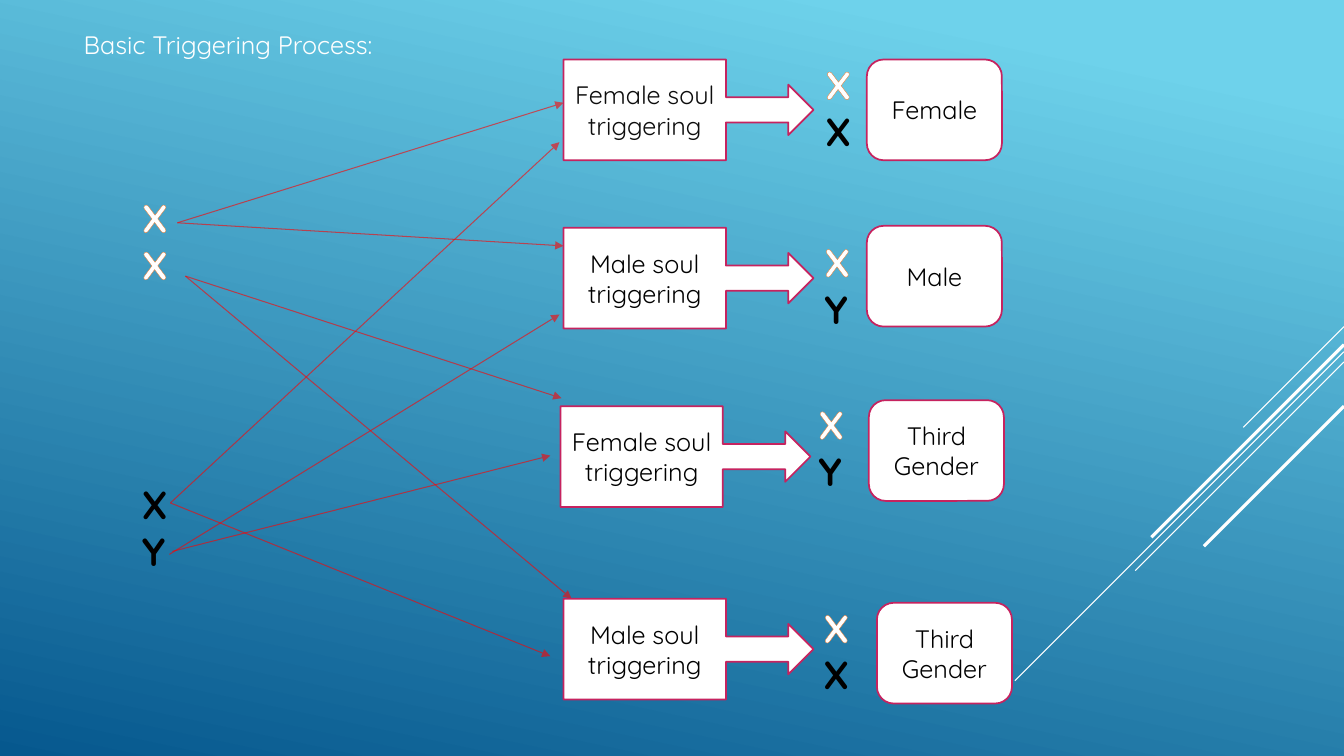
from lxml.etree import SubElement
from pptx import Presentation
from pptx.dml.color import RGBColor
from pptx.enum.shapes import MSO_CONNECTOR, MSO_SHAPE
from pptx.enum.text import MSO_ANCHOR, MSO_AUTO_SIZE, PP_ALIGN
from pptx.oxml import parse_xml
from pptx.oxml.ns import nsdecls, qn
from pptx.util import Inches, Pt

WIDTH, HEIGHT = Inches(13.333), Inches(7.5)
FONT = "Quicksand"
WHITE, BLACK, RED, PINK = "FFFFFF", "000000", "FF0000", "C6235F"
ORANGE, PEACH = "E87D37", "F1B187"

# All positions and sizes are percentages of the slide's width and height.
CALLOUT_SIZE = (18.6, 13.33)
RESULT_SIZE = (10.05, 13.33)
PAIR_SIZE = (3.52, 13.87)

# Callout text, colour and place; second chromosome and pair place; result and place
OUTCOMES = [
    ("Female soul triggering", "0D0D0D", (41.93, 7.87), "X", (60.68, 7.33), "Female", (64.5, 7.87)),
    ("Male soul triggering", BLACK, (41.93, 30.13), "Y", (60.6, 30.8), "Male", (64.5, 29.87)),
    ("Female soul triggering", BLACK, (41.7, 53.73), "Y", (60.15, 52.27), "Third Gender", (64.65, 52.93)),
    ("Male soul triggering", BLACK, (41.93, 79.2), "X", (60.53, 79.2), "Third Gender", (65.25, 79.73)),
]

# Start of each fan of arrows, then its ends
ARROWS = [
    ((13.2, 29.47), [(41.93, 13.6), (41.93, 32.53)]),
    ((13.8, 36.53), [(41.78, 52.67), (42.53, 79.2)]),
    ((12.68, 66.53), [(41.63, 18.8), (40.95, 86.8)]),
    ((12.83, 72.93), [(40.95, 60.27)]),
    ((12.6, 73.33), [(41.63, 41.6)]),
]

# Height at the right edge, horizontal run, line width
DIAGONALS = [(43.2, 7.5, 0.75), (46.53, 24.48, 0.75), (47.87, 15.53, 0.75),
             (45.6, 14.33, 2.25), (53.73, 10.42, 2.25)]


def rgb(value):
    return RGBColor.from_string(value)


def share(x, y):
    """Turn percentages of the slide into lengths."""
    return round(WIDTH * x / 100), round(HEIGHT * y / 100)


def add_text(p, text, size=18, color=BLACK, bold=None, align=None):
    p.alignment = align
    r = p.add_run()
    r.text = text
    r.font.name, r.font.size, r.font.bold = FONT, Pt(size), bold
    r.font.color.rgb = rgb(color)
    return r


def outline_text(r, width):
    r.font._element.insert(0, parse_xml(
        f'<a:ln {nsdecls("a")} w="{Pt(width)}"><a:solidFill>'
        f'<a:srgbClr val="{ORANGE}"/></a:solidFill></a:ln>'))


def pattern_text(r):
    r_pr = r.font._element
    r_pr.replace(r_pr.find(qn("a:solidFill")), parse_xml(
        f'<a:pattFill {nsdecls("a")} prst="ltDnDiag">'
        f'<a:fgClr><a:srgbClr val="{PEACH}"/></a:fgClr>'
        f'<a:bgClr><a:srgbClr val="{BLACK}"/></a:bgClr></a:pattFill>'))


def add_pair(slide, place, chromosomes):
    """Stack (letter, is_dark) chromosomes in one text box."""
    tf = slide.shapes.add_textbox(*share(*place), *share(*PAIR_SIZE)).text_frame
    tf.word_wrap, tf.auto_size = False, MSO_AUTO_SIZE.SHAPE_TO_FIT_TEXT
    for i, (letter, is_dark) in enumerate(chromosomes):
        p = tf.add_paragraph() if i else tf.paragraphs[0]
        r = add_text(p, letter, size=28, color=WHITE, bold=True)
        if is_dark:
            pattern_text(r)
        outline_text(r, 1 if is_dark else 0.8)


def add_box(slide, kind, place, size, text, color=BLACK):
    sp = slide.shapes.add_shape(kind, *share(*place), *share(*size))
    sp.shadow.inherit = False
    sp.fill.solid()
    sp.fill.fore_color.rgb = rgb(WHITE)
    sp.line.color.rgb = rgb(PINK)
    sp.line.width = Pt(1.25)
    tf = sp.text_frame
    tf.word_wrap, tf.vertical_anchor = True, MSO_ANCHOR.MIDDLE
    add_text(tf.paragraphs[0], text, color=color, align=PP_ALIGN.CENTER)


def add_line(slide, start, end, color, width=0.75):
    line = slide.shapes.add_connector(MSO_CONNECTOR.STRAIGHT, *share(*start), *share(*end))
    line.line.color.rgb = rgb(color)
    line.line.width = Pt(width)
    SubElement(line._element.spPr, qn("a:effectLst"))
    return line


def add_arrow(slide, start, end):
    ln = add_line(slide, start, end, RED).line._get_or_add_ln()
    SubElement(ln.find(".//" + qn("a:srgbClr")), qn("a:alpha"), val="60000")
    SubElement(ln, qn("a:tailEnd"), type="triangle")


def set_background(slide):
    fill = slide.background.fill
    fill.gradient()
    fill.gradient_angle = 360 - 102
    for stop, position, color in zip(fill.gradient_stops, (0.1, 1), ("6ED2EB", "06588E")):
        stop.position = position
        stop.color.rgb = rgb(color)


def set_title(slide, text):
    title = slide.shapes.title
    title.left, title.top = share(5.48, 3.2)
    title.width, title.height = share(23.55, 5.33)
    tf = title.text_frame
    tf.word_wrap, tf.auto_size = False, MSO_AUTO_SIZE.SHAPE_TO_FIT_TEXT
    tf.vertical_anchor = MSO_ANCHOR.TOP
    add_text(tf.paragraphs[0], text, color=WHITE, align=PP_ALIGN.LEFT)


def main():
    prs = Presentation()
    prs.slide_width, prs.slide_height = WIDTH, HEIGHT
    slide = prs.slides.add_slide(prs.slide_layouts[5])
    set_background(slide)
    set_title(slide, "Basic Triggering Process:")

    for top, run, width in DIAGONALS:
        add_line(slide, (100, top), (100 - run, top + run * WIDTH / HEIGHT), WHITE, width)

    add_pair(slide, (9.83, 24.93), [("X", False), ("X", False)])
    add_pair(slide, (9.83, 62.93), [("X", True), ("Y", True)])
    for start, ends in ARROWS:
        for end in ends:
            add_arrow(slide, start, end)

    for trigger, color, trigger_at, letter, pair_at, result, result_at in OUTCOMES:
        add_pair(slide, pair_at, [("X", False), (letter, True)])
        add_box(slide, MSO_SHAPE.RIGHT_ARROW_CALLOUT, trigger_at, CALLOUT_SIZE, trigger, color)
        add_box(slide, MSO_SHAPE.ROUNDED_RECTANGLE, result_at, RESULT_SIZE, result)

    prs.save("out.pptx")


if __name__ == "__main__":
    main()
